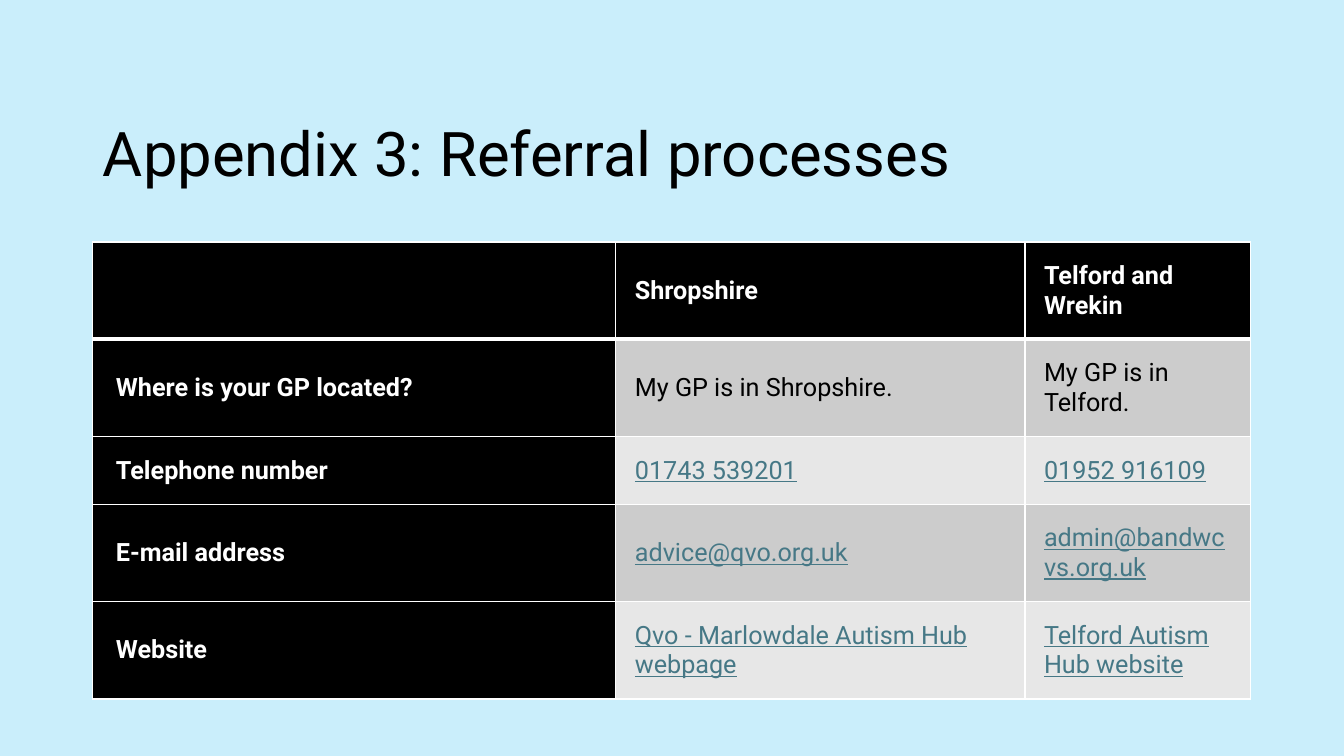
from lxml import etree
from pptx import Presentation
from pptx.dml.color import RGBColor
from pptx.enum import text
from pptx.oxml.ns import qn
from pptx.util import Cm, Pt

# Content
TITLE = "Appendix 3: Referral processes"
REFERRALS = [
    ("", "Shropshire", "Telford and Wrekin"),
    ("Where is your GP located?", "My GP is in Shropshire.", "My GP is in Telford."),
    ("Telephone number", "01743 539201", "01952 916109"),
    ("E-mail address", "advice@qvo.org.uk", "admin@bandwcvs.org.uk"),
    ("Website", "Qvo - Marlowdale Autism Hub webpage", "Telford Autism Hub website"),
]
FIRST_LINK_ROW = 2
COLUMN_WIDTHS = [13.18, 10.31, 5.69]
ROW_HEIGHTS = [2.43, 2.43, 1.71, 2.43, 2.43]
LEFT, TABLE_TOP = 2.34, 6.1
INSET, OUTER_INSET = 0.48, 0.58
FONT = "Roboto"
COLOURS = {"background": "CAEEFB", "dark": "000000", "light": "FFFFFF",
           "odd": "CCCCCC", "even": "E7E7E7", "link": "467886"}


def colour(name):
    return RGBColor.from_string(COLOURS[name])


def add_border(cell, side, points):
    line = etree.SubElement(cell._tc.get_or_add_tcPr(), qn(f"a:ln{side}"), w=str(Pt(points)))
    fill = etree.SubElement(line, qn("a:solidFill"))
    etree.SubElement(fill, qn("a:srgbClr"), val=COLOURS["light"])


def format_cell(cell, words, row, column):
    heading = row == 0 or column == 0
    link = not heading and row >= FIRST_LINK_ROW

    # Borders: a heavier rule under the header row
    for side in "LRTB":
        heavy = (row, side) in [(0, "B"), (1, "T")]
        add_border(cell, side, 3 if heavy else 1)
    cell.fill.solid()
    cell.fill.fore_color.rgb = colour("dark" if heading else "odd" if row % 2 else "even")

    # Insets: wider at the outer edges of the table
    cell.vertical_anchor = text.MSO_ANCHOR.MIDDLE
    cell.margin_top = cell.margin_bottom = Cm(INSET)
    cell.margin_left = Cm(OUTER_INSET if column == 0 else INSET)
    cell.margin_right = Cm(OUTER_INSET if column == len(COLUMN_WIDTHS) - 1 else INSET)

    # Text
    cell.text = words
    font = cell.text_frame.paragraphs[0].font
    font.name, font.size, font.bold = FONT, Pt(18), heading
    font.underline = link
    font.color.rgb = colour("light" if heading else "link" if link else "dark")


deck = Presentation()
deck.slide_width, deck.slide_height = Cm(33.87), Cm(19.05)
page = deck.slides.add_slide(deck.slide_layouts[5])
page.background.fill.solid()
page.background.fill.fore_color.rgb = colour("background")

# Title
title = page.shapes.title
title.left, title.top, title.width, title.height = Cm(LEFT), Cm(2.92), Cm(29.21), Cm(2.06)
title.text_frame.text = TITLE
title.text_frame.vertical_anchor = text.MSO_ANCHOR.MIDDLE
para = title.text_frame.paragraphs[0]
para.alignment = text.PP_ALIGN.LEFT
para.line_spacing = 0.9
para.font.name, para.font.size = FONT, Pt(44)
para.font.color.rgb = colour("dark")

# Referral table
table = page.shapes.add_table(
    len(ROW_HEIGHTS), len(COLUMN_WIDTHS), Cm(LEFT), Cm(TABLE_TOP),
    Cm(sum(COLUMN_WIDTHS)), Cm(sum(ROW_HEIGHTS))).table
for column, width in zip(table.columns, COLUMN_WIDTHS):
    column.width = Cm(width)
for row, height in zip(table.rows, ROW_HEIGHTS):
    row.height = Cm(height)
for row, entries in enumerate(REFERRALS):
    for column, words in enumerate(entries):
        format_cell(table.cell(row, column), words, row, column)

deck.save("out.pptx")
